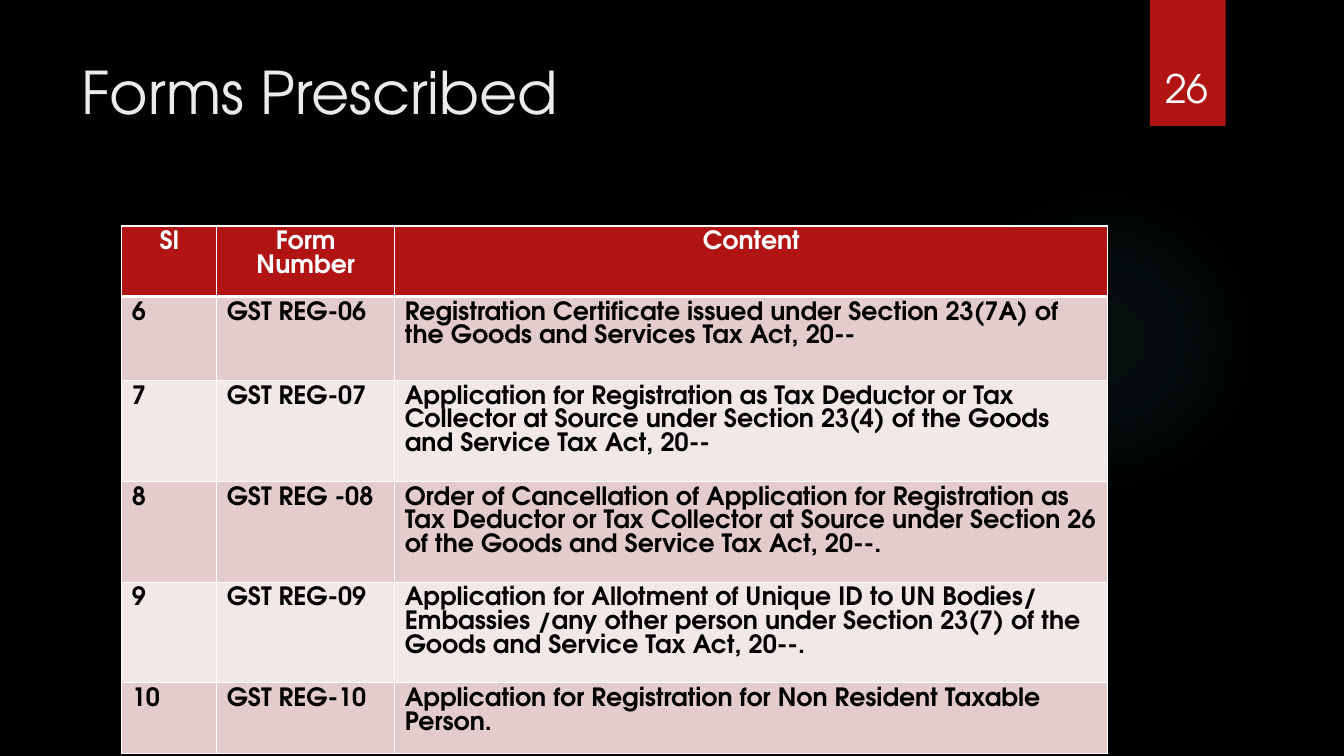
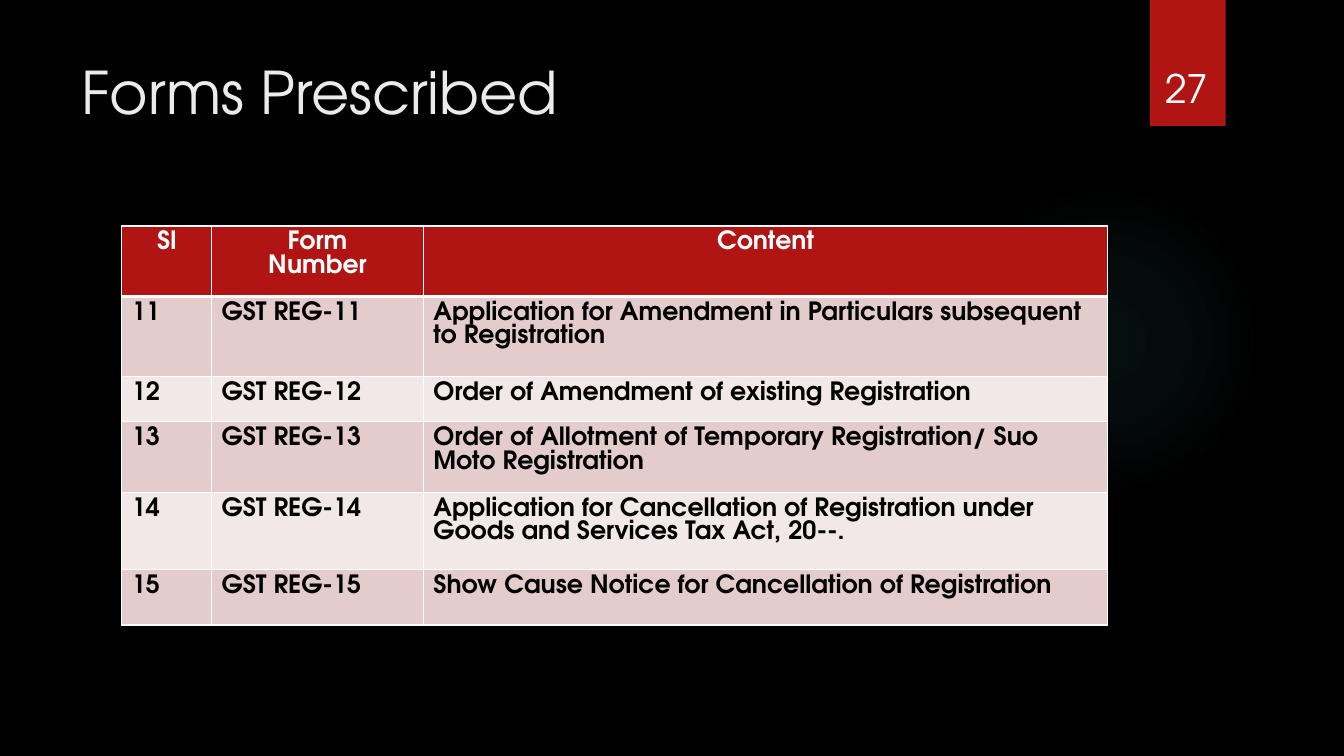
from dataclasses import dataclass

from pptx import Presentation
from pptx.dml.color import RGBColor
from pptx.enum.shapes import MSO_SHAPE
from pptx.enum.text import MSO_ANCHOR, PP_ALIGN
from pptx.oxml import parse_xml
from pptx.oxml.ns import nsdecls
from pptx.util import Emu, Pt


@dataclass(frozen=True)
class Theme:
    font: str = "TeX Gyre Adventor"
    backdrop: str = "000000"
    accent: str = "B01513"
    glow: str = "50B9C1"
    title: str = "EBEBEB"
    light: str = "FFFFFF"
    dark: str = "000000"
    bands: tuple = ("E4CCCC", "F2E8E7")
    title_size: int = 42
    number_size: int = 28
    table_size: int = 18
    table_leading: float = 16.8


THEME = Theme()
COLUMNS, ROWS = 160, 90
UNIT = 76200  # one grid cell, a twelfth of an inch

TABLE_LEFT, TABLE_TOP, TABLE_WIDTH = 14.5, 26.9, 117.4
HEADINGS = (["Sl"], ["Form", "Number"], ["Content"])

PAGES = [
    {
        "number": 26,
        "first_serial": 6,
        "narrow_columns": (11.3, 21.2),
        "row_heights": (8.4, 10, 12, 12, 12, 8.4),
        "forms": [
            ("GST REG-06", ["Registration Certificate issued under Section 23(7A) of "
                            "the Goods and Services Tax Act, 20--"]),
            ("GST REG-07", ["Application for Registration as Tax Deductor or Tax",
                            "Collector at Source under Section 23(4) of the Goods "
                            "and Service Tax Act, 20--"]),
            ("GST REG -08", ["Order of Cancellation of Application for Registration as "
                             "Tax Deductor or Tax Collector at Source under Section 26 "
                             "of the Goods and Service Tax Act, 20--."]),
            ("GST REG-09", ["Application for Allotment of Unique ID to UN Bodies/",
                            "Embassies /any other person under Section 23(7) of the",
                            "Goods and Service Tax Act, 20--."]),
            ("GST REG-10", ["Application for Registration for Non Resident Taxable",
                            "Person."]),
        ],
    },
    {
        "number": 27,
        "first_serial": 11,
        "narrow_columns": (10.7, 25.2),
        "row_heights": (8.4, 9.5, 5.4, 8.4, 9.2, 6.6),
        "forms": [
            ("GST REG-11", ["Application for Amendment in Particulars subsequent "
                            "to Registration"]),
            ("GST REG-12", ["Order of Amendment of existing Registration"]),
            ("GST REG-13", ["Order of Allotment of Temporary Registration/ Suo "
                            "Moto Registration"]),
            ("GST REG-14", ["Application for Cancellation of Registration under "
                            "Goods and Services Tax Act, 20--."]),
            ("GST REG-15", ["Show Cause Notice for Cancellation of Registration"]),
        ],
    },
]


def grid(*cells):
    """Turn counts of grid cells into lengths."""
    return [Emu(round(cell * UNIT)) for cell in cells]


def write(frame, lines, size, color, bold=False, align=PP_ALIGN.LEFT, leading=None):
    """Fill a text frame with one paragraph per line."""
    frame.word_wrap = True
    for index, line in enumerate(lines):
        paragraph = frame.paragraphs[0] if index == 0 else frame.add_paragraph()
        paragraph.alignment = align
        if leading:
            paragraph.line_spacing = Pt(leading)
        run = paragraph.add_run()
        run.text = line
        run.font.name = THEME.font
        run.font.size = Pt(size)
        run.font.bold = bold
        run.font.color.rgb = RGBColor.from_string(color)


prs = Presentation()
prs.slide_width, prs.slide_height = grid(COLUMNS, ROWS)
backdrop = prs.slide_master.background.fill
backdrop.solid()
backdrop.fore_color.rgb = RGBColor.from_string(THEME.backdrop)

for page in PAGES:
    slide = prs.slides.add_slide(prs.slide_layouts[6])

    glow = slide.shapes.add_shape(MSO_SHAPE.OVAL, *grid(112.9, 22, 37, 37))
    glow.shadow.inherit = False
    glow.line.fill.background()
    stops = "".join(
        f'<a:gs pos="{place * 1000}"><a:srgbClr val="{THEME.glow}">'
        f'<a:alpha val="{opacity * 1000}"/></a:srgbClr></a:gs>'
        for place, opacity in ((0, 7), (36, 6), (69, 0))
    )
    glow.line._ln.addprevious(parse_xml(
        f'<a:gradFill {nsdecls("a")}><a:gsLst>{stops}</a:gsLst><a:path path="circle">'
        '<a:fillToRect l="50000" t="50000" r="50000" b="50000"/></a:path></a:gradFill>'
    ))

    ribbon = slide.shapes.add_shape(MSO_SHAPE.RECTANGLE, *grid(136.9, 0, 9, 15))
    ribbon.fill.solid()
    ribbon.fill.fore_color.rgb = RGBColor.from_string(THEME.accent)
    ribbon.line.fill.background()
    ribbon.line._ln.addnext(parse_xml(
        f'<a:effectLst {nsdecls("a")}><a:outerShdw blurRad="{Pt(3)}" dist="{Pt(2)}" '
        f'dir="5400000" rotWithShape="0"><a:srgbClr val="{THEME.dark}">'
        '<a:alpha val="45000"/></a:srgbClr></a:outerShdw></a:effectLst>'
    ))

    title = slide.shapes.add_textbox(*grid(8.5, 6, 123.5, 18.4)).text_frame
    write(title, ["Forms Prescribed"], THEME.title_size, THEME.title)

    heights = page["row_heights"]
    widths = (*page["narrow_columns"], TABLE_WIDTH - sum(page["narrow_columns"]))
    forms = slide.shapes.add_table(
        len(heights), len(widths),
        *grid(TABLE_LEFT, TABLE_TOP, TABLE_WIDTH, sum(heights)),
    ).table
    for column, width in zip(forms.columns, grid(*widths)):
        column.width = width
    for row, height in zip(forms.rows, grid(*heights)):
        row.height = height

    entries = [HEADINGS] + [
        ([str(serial)], [form], content)
        for serial, (form, content) in enumerate(page["forms"], page["first_serial"])
    ]
    for row, entry in enumerate(entries):
        heading = row == 0
        fill = THEME.accent if heading else THEME.bands[(row - 1) % 2]
        borders = {"L": 1, "R": 1, "T": 3 if row == 1 else 1, "B": 3 if heading else 1}
        for column, lines in enumerate(entry):
            cell = forms.cell(row, column)
            cell.fill.solid()
            cell.fill.fore_color.rgb = RGBColor.from_string(fill)
            write(cell.text_frame, lines, THEME.table_size,
                  THEME.light if heading else THEME.dark, bold=True,
                  align=PP_ALIGN.CENTER if heading else PP_ALIGN.LEFT,
                  leading=THEME.table_leading)
            properties = cell._tc.get_or_add_tcPr()
            for position, (side, weight) in enumerate(borders.items()):
                properties.insert(position, parse_xml(
                    f'<a:ln{side} {nsdecls("a")} w="{Pt(weight)}"><a:solidFill>'
                    f'<a:srgbClr val="{THEME.light}"/></a:solidFill></a:ln{side}>'
                ))

    number = slide.shapes.add_textbox(*grid(135.8, 3.8, 11, 10.1)).text_frame
    number.vertical_anchor = MSO_ANCHOR.BOTTOM
    write(number, [str(page["number"])], THEME.number_size, THEME.light,
          align=PP_ALIGN.CENTER)

prs.save("out.pptx")
